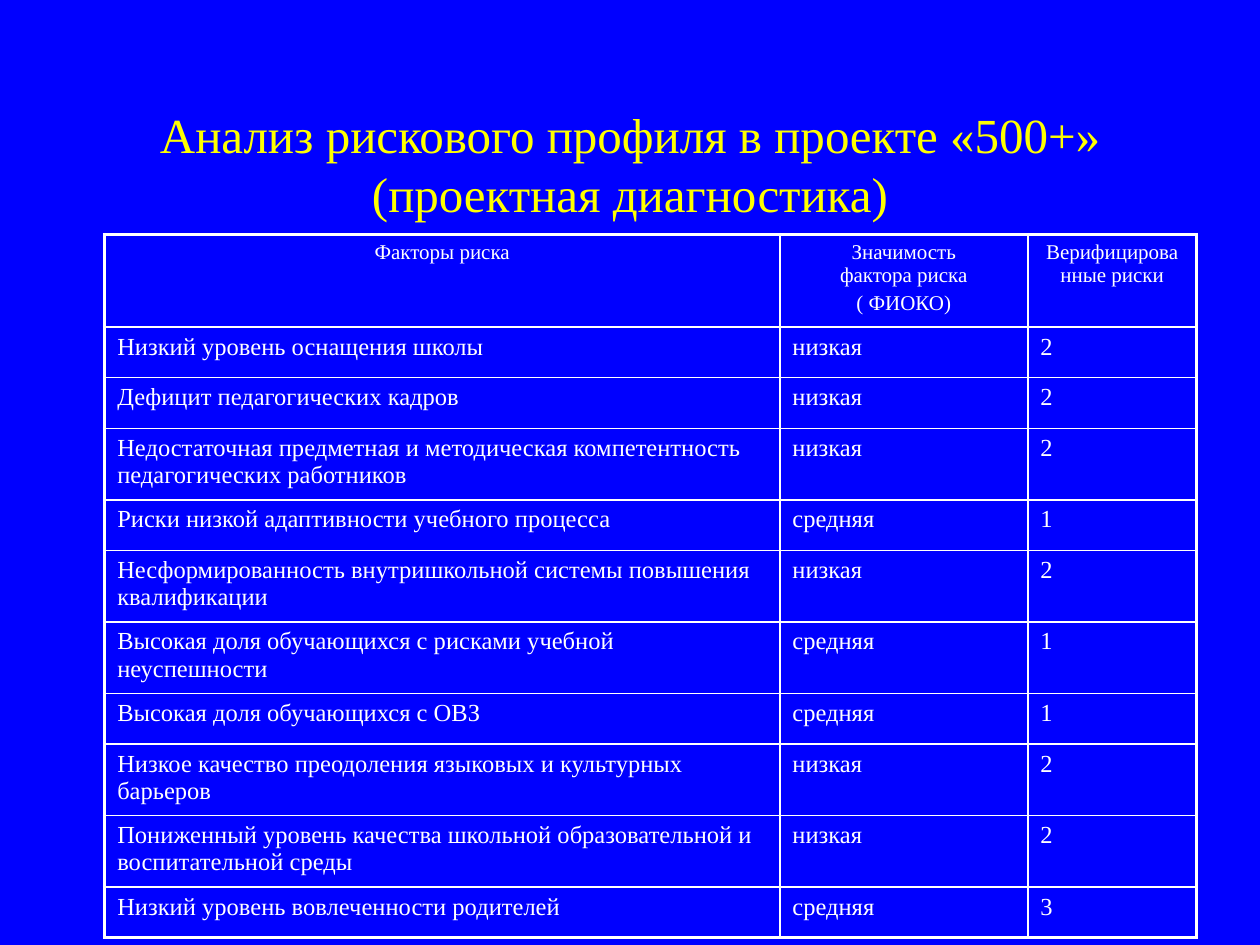
from copy import deepcopy
from dataclasses import dataclass

from lxml import etree
from pptx import Presentation
from pptx.dml.color import RGBColor
from pptx.enum import text
from pptx.oxml.ns import qn
from pptx.util import Cm, Pt


@dataclass(frozen=True)
class Theme:
    back: str = "0000FF"
    title: str = "FFFF00"
    body: str = "FFFFFF"
    font: str = "Times New Roman"
    title_size: int = 28
    head_size: int = 12
    body_size: int = 14
    outer: float = 2.25
    inner: float = 1


T = Theme()

TITLE = "Анализ рискового профиля в проекте «500+»\v(проектная диагностика)"
HEADER = ("Факторы риска", "Значимость\vфактора риска\n( ФИОКО)", "Верифицированные риски")
RISKS = [
    ("Низкий уровень оснащения школы", "низкая", 2),
    ("Дефицит педагогических кадров", "низкая", 2),
    ("Недостаточная предметная и методическая компетентность педагогических работников", "низкая", 2),
    ("Риски низкой адаптивности учебного процесса", "средняя", 1),
    ("Несформированность внутришкольной системы повышения квалификации", "низкая", 2),
    ("Высокая доля обучающихся с рисками учебной неуспешности", "средняя", 1),
    ("Высокая доля обучающихся с ОВЗ", "средняя", 1),
    ("Низкое качество преодоления языковых и культурных барьеров", "низкая", 2),
    ("Пониженный уровень качества школьной образовательной и воспитательной среды", "низкая", 2),
    ("Низкий уровень вовлеченности родителей", "средняя", 3),
]
COL_WIDTHS = (13.61, 5, 3.4)
ROW_HEIGHT = 1.02


def write(tf, content, size, color, align):
    tf.text = content
    for i, p in enumerate(tf.paragraphs):
        p.alignment = align
        if i:
            p.space_before = Pt(0.2 * size)
        for r in p.runs:
            r.font.name = T.font
            r.font.size = Pt(size)
            r.font.color.rgb = RGBColor.from_string(color)
        for br in p._p.findall(qn("a:br")):
            br.append(deepcopy(p.runs[0]._r.rPr))


def set_borders(cell, widths):
    tc_pr = cell._tc.get_or_add_tcPr()
    for side, width in zip("LRTB", widths):
        ln = etree.SubElement(tc_pr, qn(f"a:ln{side}"), w=str(Pt(width)))
        fill = etree.SubElement(ln, qn("a:solidFill"))
        etree.SubElement(fill, qn("a:srgbClr"), val=T.body)


def add_title(s, left, top, width, height):
    tf = s.shapes.add_textbox(Cm(left), Cm(top), Cm(width), Cm(height)).text_frame
    tf.word_wrap = True
    tf.vertical_anchor = text.MSO_ANCHOR.MIDDLE
    write(tf, TITLE, T.title_size, T.title, text.PP_ALIGN.CENTER)


def add_risk_table(s, left, top):
    rows = [HEADER, *RISKS]
    last_row, last_col = len(rows) - 1, len(COL_WIDTHS) - 1
    table = s.shapes.add_table(
        len(rows), len(COL_WIDTHS), Cm(left), Cm(top),
        Cm(sum(COL_WIDTHS)), Cm(ROW_HEIGHT * len(rows)),
    ).table
    table.first_row = table.horz_banding = False
    for col, width in zip(table.columns, COL_WIDTHS):
        col.width = Cm(width)
    for i, row in enumerate(rows):
        table.rows[i].height = Cm(ROW_HEIGHT)
        size = T.body_size if i else T.head_size
        align = text.PP_ALIGN.LEFT if i else text.PP_ALIGN.CENTER
        for j, value in enumerate(row):
            cell = table.cell(i, j)
            write(cell.text_frame, str(value), size, T.body, align)
            edges = (j == 0, j == last_col, i == 0, i == last_row)
            set_borders(cell, [T.outer if edge else T.inner for edge in edges])
            cell.fill.background()


def main():
    prs = Presentation()
    prs.slide_width, prs.slide_height = Cm(25.4), Cm(19.05)
    s = prs.slides.add_slide(prs.slide_layouts[6])
    s.background.fill.solid()
    s.background.fill.fore_color.rgb = RGBColor.from_string(T.back)
    add_title(s, 1.9, 1.7, 21.6, 3.18)
    add_risk_table(s, 2.11, 4.73)
    prs.save("out.pptx")


if __name__ == "__main__":
    main()
